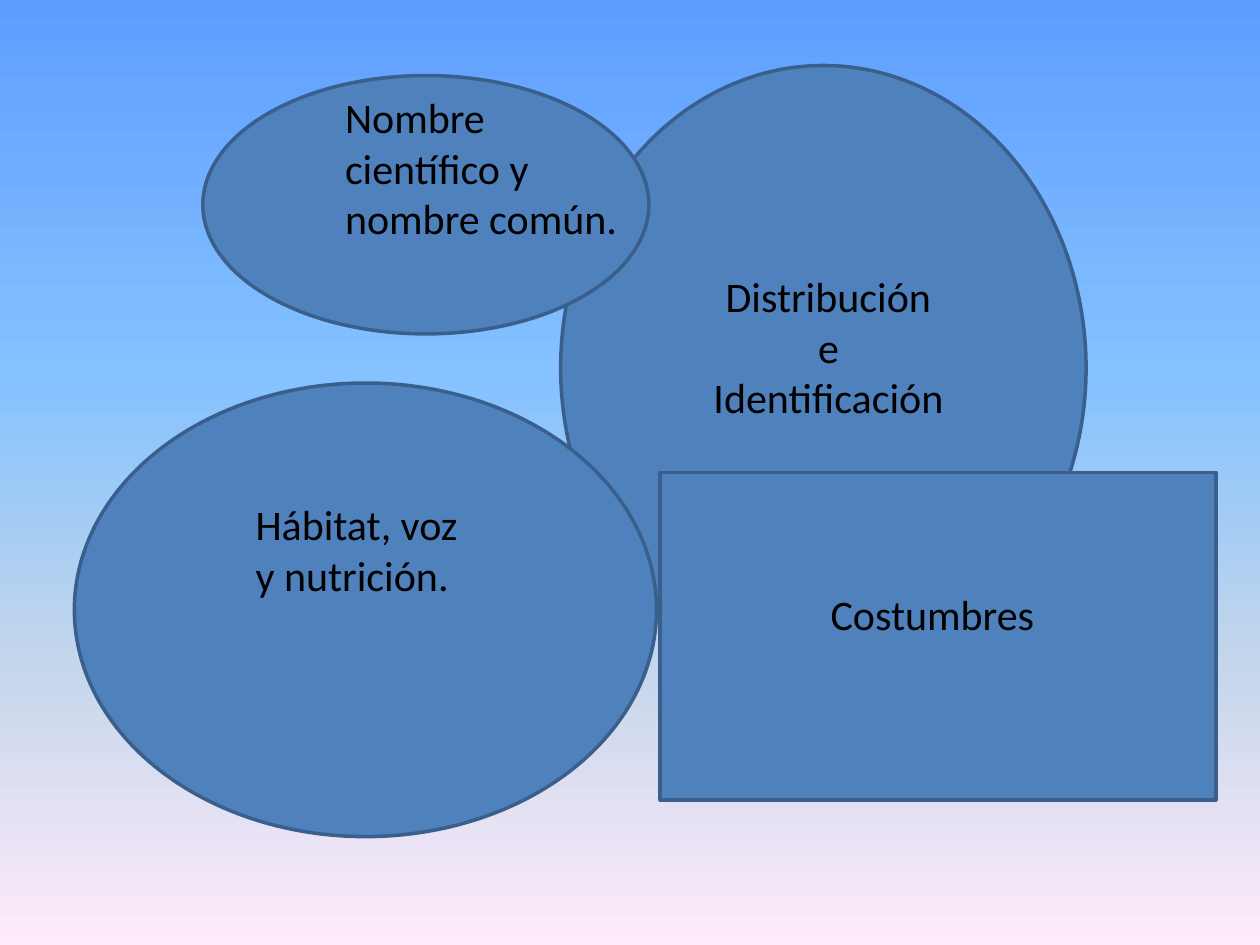
from copy import deepcopy

from pptx import Presentation
from pptx.dml.color import RGBColor
from pptx.enum.shapes import MSO_SHAPE
from pptx.enum.text import MSO_AUTO_SIZE, PP_ALIGN
from pptx.oxml.ns import qn
from pptx.util import Inches, Pt

ELLIPSE = MSO_SHAPE.OVAL
RECTANGLE = MSO_SHAPE.RECTANGLE
LEFT = PP_ALIGN.LEFT
CENTER = PP_ALIGN.CENTER
GROW = MSO_AUTO_SIZE.SHAPE_TO_FIT_TEXT

SKY = [(0, "5E9EFF"), (0.4, "85C2FF"), (0.7, "C4D6EB"), (1, "FFEBFA")]

AREAS = [
    (ELLIPSE, (4.45, 0.52, 4.17, 4.8)),
    (ELLIPSE, (0.59, 3.04, 4.62, 3.6)),
    (RECTANGLE, (5.24, 3.75, 4.41, 2.6)),
    (ELLIPSE, (1.61, 0.6, 3.54, 2.05)),
]

TOPICS = [
    ("Nombre científico y nombre común.", (2.64, 0.68, 2.36, 1.31), LEFT),
    ("Distribución e Identificación", (5.55, 2.1, 2.05, 1.31), CENTER),
    ("Hábitat, voz y nutrición.", (1.93, 3.91, 1.89, 0.91), LEFT),
    ("Costumbres", (6.1, 4.62, 2.6, 0.5), CENTER),
]


def color(value):
    return RGBColor.from_string(value)


def paint_sky(slide):
    fill = slide.background.fill
    fill.gradient()
    fill.gradient_angle = 270
    stop_list = next(slide.element.iter(qn("a:gsLst")))
    while len(stop_list) < len(SKY):
        stop_list.append(deepcopy(stop_list[0]))
    for stop, (position, shade) in zip(fill.gradient_stops, SKY):
        stop.position = position
        stop.color.rgb = color(shade)


def add_area(slide, outline, box):
    area = slide.shapes.add_shape(outline, *map(Inches, box))
    area.shadow.inherit = False
    area.fill.solid()
    area.fill.fore_color.rgb = color("4F81BD")
    area.line.color.rgb = color("3A5F8C")
    area.line.width = Pt(2)


def add_topic(slide, wording, box, alignment):
    frame = slide.shapes.add_textbox(*map(Inches, box)).text_frame
    frame.word_wrap = True
    frame.auto_size = GROW
    frame.text = wording
    paragraph = frame.paragraphs[0]
    paragraph.alignment = alignment
    font = paragraph.runs[0].font
    font.name = "Calibri"
    font.size = Pt(24)
    font.color.rgb = color("000000")


def main():
    presentation = Presentation()
    presentation.slide_width = Inches(10)
    presentation.slide_height = Inches(7.5)
    slide = presentation.slides.add_slide(presentation.slide_layouts[6])
    paint_sky(slide)
    for outline, box in AREAS:
        add_area(slide, outline, box)
    for wording, box, alignment in TOPICS:
        add_topic(slide, wording, box, alignment)
    presentation.save("out.pptx")


if __name__ == "__main__":
    main()
